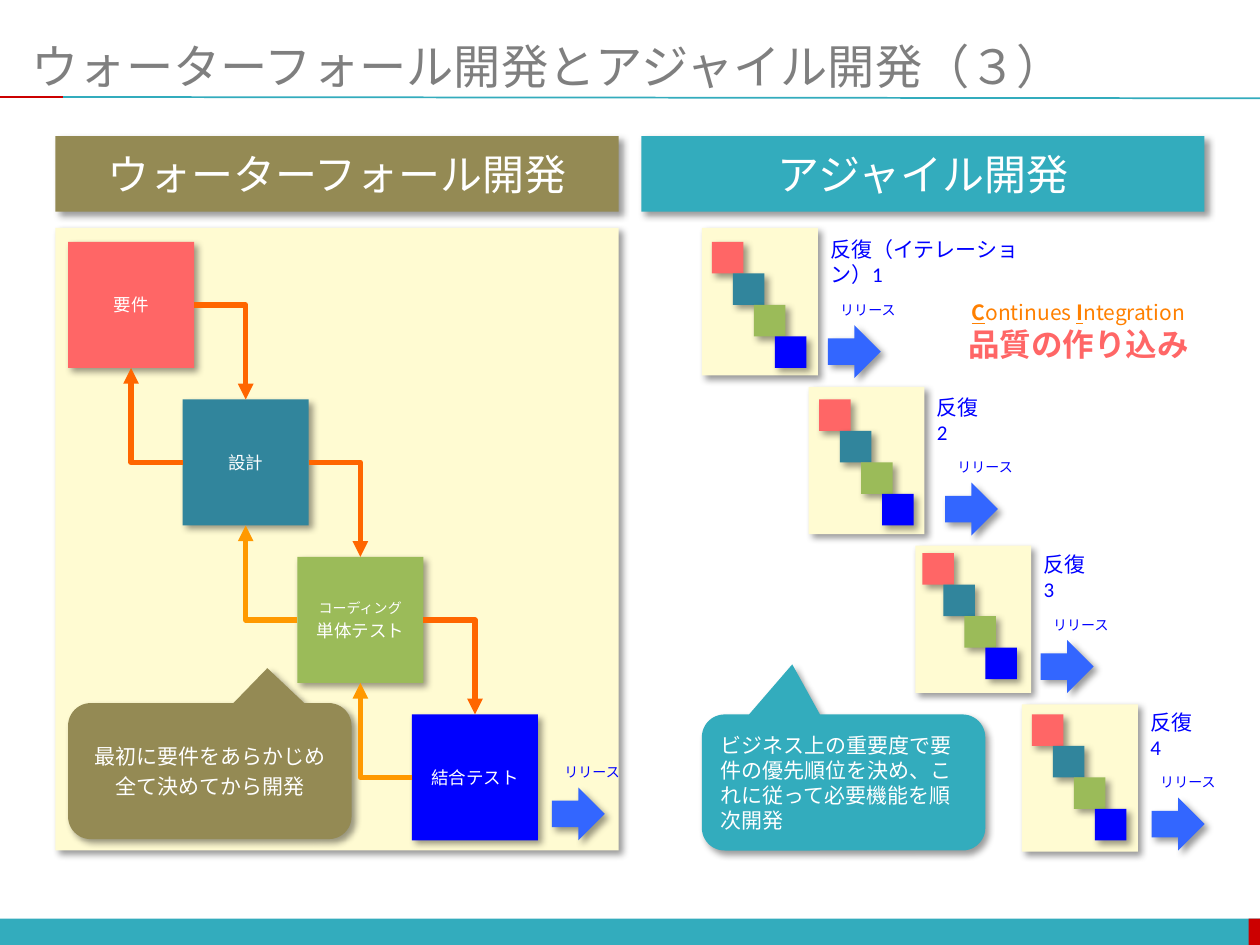
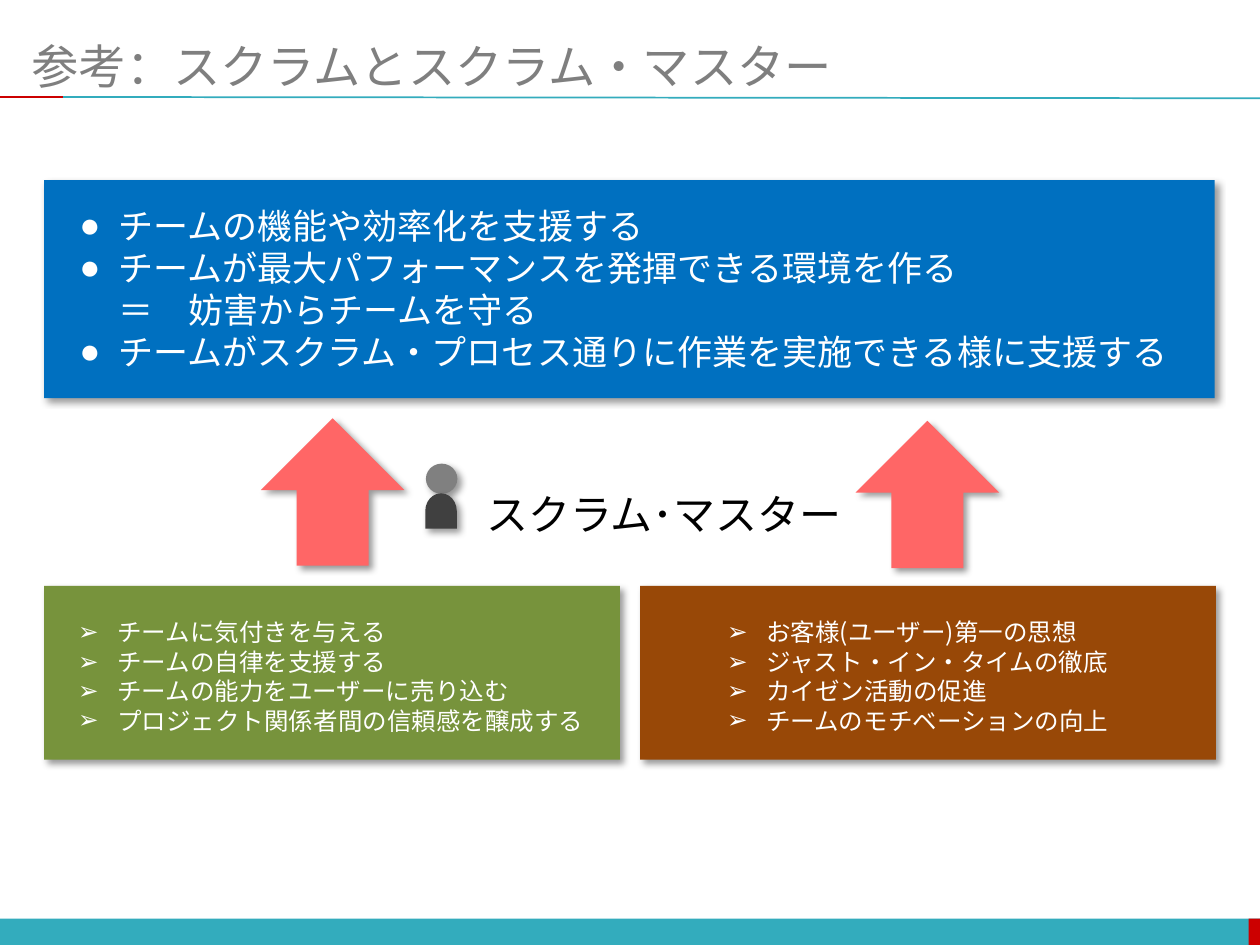
from lxml import etree
from pptx import Presentation
from pptx.dml.color import RGBColor
from pptx.enum.shapes import MSO_CONNECTOR, MSO_SHAPE
from pptx.enum.text import MSO_ANCHOR, MSO_AUTO_SIZE, PP_ALIGN
from pptx.oxml.ns import qn
from pptx.util import Inches, Pt

RECT, ROUND_RECT = MSO_SHAPE.RECTANGLE, MSO_SHAPE.ROUNDED_RECTANGLE
CALLOUT = MSO_SHAPE.ROUNDED_RECTANGULAR_CALLOUT
RIGHT_ARROW, UP_ARROW = MSO_SHAPE.RIGHT_ARROW, MSO_SHAPE.UP_ARROW
OVAL, DELAY = MSO_SHAPE.OVAL, MSO_SHAPE.FLOWCHART_DELAY
STRAIGHT, ELBOW = MSO_CONNECTOR.STRAIGHT, MSO_CONNECTOR.ELBOW
LEFT, CENTER = PP_ALIGN.LEFT, PP_ALIGN.CENTER
TOP, MIDDLE = MSO_ANCHOR.TOP, MSO_ANCHOR.MIDDLE
NO_AUTOFIT = MSO_AUTO_SIZE.NONE

CALIBRI, ARIAL, NOTO = "Calibri", "Arial", "Noto Sans CJK JP"
WHITE, BLACK, GRAY = "FFFFFF", "000000", "7F7F7F"
TEAL, RED, OLIVE, CREAM = "33ACBD", "CC0000", "948A54", "FFFBD2"
CORAL, BLUE, ARROW_BLUE = "FF6666", "0000FF", "3366FF"
ORANGE, AMBER, CI_ORANGE = "FF6600", "FF9900", "FF8000"
PHASE_COLORS = [CORAL, "31859C", "9BBB59", BLUE]
PHASES = [
    [("要件", 10, ARIAL)],
    [("設計", 10, CALIBRI)],
    [("コーディング", 8, CALIBRI), ("単体テスト", 10, CALIBRI)],
    [("結合テスト", 10, ARIAL)],
]
ITERATIONS = [
    ("反復（イテレーション）1", 1.79, 5.65, 1.92, 6.57, 6.57),
    ("反復 2", 0.64, 6.5, 3.17, 7.5, 7.5),
    ("反復 3", 0.64, 7.32, 4.39, 8.26, 8.26),
    ("反復 4", 0.64, 8.19, 5.67, 9.14, 9.11),
]


def rgb(color):
    return RGBColor.from_string(color)


def sub(parent, tag, **attrs):
    child = etree.SubElement(parent, qn(tag))
    for name, value in attrs.items():
        child.set(name, str(value))
    return child


def write(tf, text, size, color=WHITE, font=CALIBRI, align=LEFT, bullet=None,
          bold=False, underline=False, before=0, new=True):
    p = tf.paragraphs[-1]
    first = len(tf.paragraphs) == 1 and not (p.runs and new)
    if p.runs and new:
        p = tf.add_paragraph()
    if bullet and not p.runs:
        pPr = p._p.get_or_add_pPr()
        pPr.set("marL", str(Inches(0.31)))
        pPr.set("indent", str(-Inches(0.31)))
        sub(pPr, "a:buFont", typeface=ARIAL)
        sub(pPr, "a:buChar", char=bullet)
    p.alignment = align
    p.space_before = Pt(0 if first else before)
    if font == NOTO:
        p.line_spacing = Pt(size * 1.2)
    for i, line in enumerate(text.split("\n")):
        if i:
            p.add_line_break()
        r = p.add_run()
        r.text = line
        r.font.size, r.font.name = Pt(size), font
        r.font.bold, r.font.underline = bold, underline
        r.font.color.rgb = rgb(color)
        sub(r._r.get_or_add_rPr(), "a:ea", typeface=font)


def add_box(shapes, kind, x, y, w, h, fill, adj=(), shadow=True):
    sp = shapes.add_shape(kind, Inches(x), Inches(y), Inches(w), Inches(h))
    for i, value in enumerate(adj):
        sp.adjustments[i] = value
    sp.fill.solid()
    sp.fill.fore_color.rgb = rgb(fill)
    sp.line.fill.background()
    sp.shadow.inherit = False
    if shadow:
        effects = sp._element.spPr.find(qn("a:effectLst"))
        outer = sub(effects, "a:outerShdw", blurRad=Pt(4), dist=Pt(3),
                    dir=45 * 60000, algn="tl", rotWithShape=0)
        sub(sub(outer, "a:srgbClr", val=BLACK), "a:alpha", val=40000)
    sp.text_frame.vertical_anchor = MIDDLE
    return sp


def add_panel(s, x, y, w, h, fill=CREAM):
    return add_box(s.shapes, ROUND_RECT, x, y, w, h, fill, [0])


def add_label(s, x, y, w, h, wrap=False):
    tf = s.shapes.add_textbox(Inches(x), Inches(y), Inches(w), Inches(h)).text_frame
    tf.word_wrap = wrap
    return tf


def add_line(s, kind, x1, y1, x2, y2, color, width):
    line = s.shapes.add_connector(kind, Inches(x1), Inches(y1), Inches(x2), Inches(y2))
    line.line.color.rgb = rgb(color)
    line.line.width = Pt(width)
    sub(line._element.spPr, "a:effectLst")
    return line


def add_bent_arrow(s, x, y, color, upward=False):
    arrow = add_line(s, ELBOW, x, y, x + 0.41, y + 0.75, color, 3)
    spPr = arrow._element.spPr
    spPr.find(qn("a:prstGeom")).set("prst", "bentConnector2")
    if upward:
        spPr.find(qn("a:xfrm")).set("rot", str(180 * 60000))
    sub(spPr.find(qn("a:ln")), "a:tailEnd", type="triangle")


def add_master_bands(prs, s):
    bands = [
        add_box(s.shapes, RECT, 0, 7.29, 10, 0.22, TEAL, shadow=False),
        add_box(s.shapes, RECT, 9.91, 7.29, 0.1, 0.22, RED, shadow=False),
        add_line(s, STRAIGHT, 0.5, 0.77, 10, 0.78, TEAL, 1),
        add_line(s, STRAIGHT, 0, 0.77, 0.5, 0.77, RED, 1),
    ]
    for number, band in enumerate(bands, 100):
        band.element.xpath(".//p:cNvPr")[0].set("id", str(number))
        prs.slide_master.shapes.element.append(band.element)


def place(ph, x, y, w, h, anchor):
    ph.left, ph.top, ph.width, ph.height = map(Inches, (x, y, w, h))
    tf = ph.text_frame
    tf.word_wrap, tf.auto_size, tf.vertical_anchor = True, NO_AUTOFIT, anchor
    return tf


def set_title(s, text):
    tf = place(s.shapes.title, 0.25, 0.29, 9.5, 0.46, MIDDLE)
    tf.margin_left = tf.margin_right = 0
    write(tf, text, 27, GRAY, NOTO)


def add_release(s, x, y, label_x):
    add_box(s.shapes, RIGHT_ARROW, x, y, 0.42, 0.42, ARROW_BLUE)
    write(add_label(s, label_x, y - 0.24, 0.65, 0.24), "リリース", 8, BLUE)


def add_heading(s, x, y, text, fill):
    sp = add_box(s.shapes, RECT, x, y, 4.47, 0.6, fill)
    write(sp.text_frame, text, 24, align=CENTER)


def add_waterfall(s, x, y):
    add_heading(s, x, y, "ウォーターフォール開発", OLIVE)
    add_panel(s, x, y + 0.73, 4.47, 4.94)
    note = add_box(s.shapes, CALLOUT, x + 0.1, y + 4.5, 2.25, 1.08, OLIVE,
                   [0.203, -0.757, 0.167])
    for text in ("最初に要件をあらかじめ", "全て決めてから開発"):
        write(note.text_frame, text, 12, align=CENTER, before=2.4)
    step_x, step_y = 0.91, 1.25
    left, top = x + 0.1, y + 0.84
    for i, (lines, color) in enumerate(zip(PHASES, PHASE_COLORS)):
        sp = add_panel(s, left + i * step_x, top + i * step_y, 1, 1, color)
        for text, size, font in lines:
            write(sp.text_frame, text, size, font=font, align=CENTER, before=2)
    for i, back_color in enumerate([ORANGE, AMBER, AMBER]):
        px, py = left + i * step_x, top + i * step_y
        add_bent_arrow(s, px + 1, py + 0.5, ORANGE)
        add_bent_arrow(s, px + 0.5, py + 1, back_color, upward=True)
    add_release(s, x + 3.94, y + 5.17, x + 3.94)


def add_agile(s, x, y):
    add_heading(s, x, y, "アジャイル開発", TEAL)
    for i, (name, width, sq_x, sq_y, arrow_x, label_x) in enumerate(ITERATIONS):
        left = x + 0.48 + i * 0.847
        add_panel(s, left, y + 0.73 + i * 1.26, 0.92, 1.17)
        for j, color in enumerate(PHASE_COLORS):
            add_panel(s, sq_x + j / 6, sq_y + j / 4, 0.25, 0.25, color)
        tf = add_label(s, left + 0.92, y + 0.75 + i * 1.25, width, 0.3, wrap=True)
        write(tf, name, 12, BLUE)
        add_release(s, arrow_x, y + 1.5 + i * 1.25, label_x)
    note = add_box(s.shapes, CALLOUT, x + 0.48, y + 4.59, 2.25, 1.08, TEAL,
                   [-0.181, -0.868, 0.167])
    write(note.text_frame,
          "ビジネス上の重要度で要件の優先順位を決め、これに従って必要機能を順次開発", 12)
    tf = add_label(s, x + 2.47, y + 1.25, 2, 0.61)
    for i, text in enumerate(["C", "ontinues ", "I", "ntegration"]):
        initial = i % 2 == 0
        write(tf, text, 12, CI_ORANGE, NOTO, CENTER, bold=initial,
              underline=initial, new=False)
    write(tf, "品質の作り込み", 18, CORAL, NOTO, CENTER, bold=True)


def add_list(s, ph, panel, fill, box, items, size, bullet):
    add_box(s.shapes, RECT, *panel, fill)
    s.shapes.element.append(ph.element)
    tf = place(ph, *box, TOP)
    for item in items:
        write(tf, item, size, font=NOTO, bullet=bullet)


def add_scrum_master(s, x, y):
    person = s.shapes.add_group_shape()
    add_box(person.shapes, OVAL, x + 0.02, y, 0.25, 0.24, "808080")
    add_box(person.shapes, DELAY, x, y + 0.25, 0.28, 0.25, "404040").rotation = 270
    tf = add_label(s, x + 0.4, y + 0.15, 3.06, 0.5)
    write(tf, "スクラム･マスター", 24, BLACK, NOTO)


def build_comparison(s):
    set_title(s, "ウォーターフォール開発とアジャイル開発（３）")
    add_waterfall(s, 0.44, 1.08)
    add_agile(s, 5.09, 1.08)


def build_scrum(s):
    set_title(s, "参考：スクラムとスクラム・マスター")
    bodies = {ph.placeholder_format.idx: ph for ph in s.placeholders}
    unused = bodies[3].element
    unused.getparent().remove(unused)
    add_list(s, bodies[2], (0.35, 4.65, 4.57, 1.38), "77933C", (0.52, 4.85, 4.23, 1.04),
             ["チームに気付きを与える", "チームの自律を支援する",
              "チームの能力をユーザーに売り込む",
              "プロジェクト関係者間の信頼感を醸成する"], 14, "➢")
    add_list(s, bodies[4], (5.08, 4.65, 4.57, 1.38), "984807", (5.67, 4.85, 3.38, 1.04),
             ["お客様(ユーザー)第一の思想", "ジャスト・イン・タイムの徹底",
              "カイゼン活動の促進", "チームのモチベーションの向上"], 14, "➢")
    add_list(s, bodies[1], (0.35, 1.43, 9.29, 1.73), "0070C0", (0.53, 1.57, 8.94, 1.45),
             ["チームの機能や効率化を支援する",
              "チームが最大パフォーマンスを発揮できる環境を作る\n＝　妨害からチームを守る",
              "チームがスクラム・プロセス通りに作業を実施できる様に支援する"], 20, "●")
    add_scrum_master(s, 3.36, 3.68)
    for x, y in ((2.07, 3.32), (6.79, 3.34)):
        add_box(s.shapes, UP_ARROW, x, y, 1.14, 1.17, CORAL)


def main():
    prs = Presentation()
    prs.slide_width, prs.slide_height = Inches(10), Inches(7.5)
    title_only, comparison = prs.slide_layouts[5], prs.slide_layouts[4]
    s = prs.slides.add_slide(title_only)
    add_master_bands(prs, s)
    build_comparison(s)
    build_scrum(prs.slides.add_slide(comparison))
    prs.save("out.pptx")


if __name__ == "__main__":
    main()
